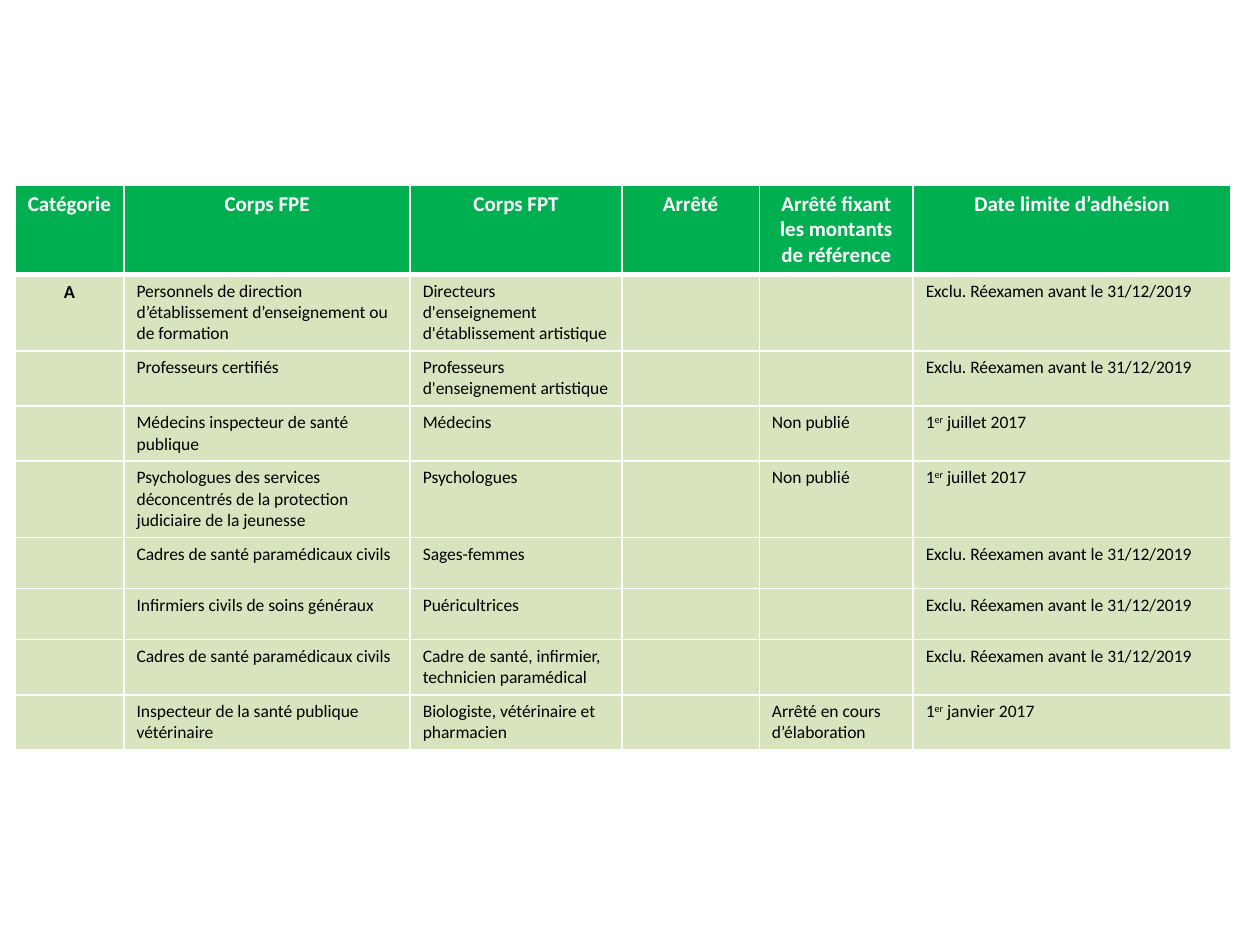
import dataclasses

import lxml.etree
import pptx
import pptx.dml.color
import pptx.enum.text
import pptx.oxml.ns
import pptx.table
import pptx.util

Cm = pptx.util.Cm
Pt = pptx.util.Pt
RGBColor = pptx.dml.color.RGBColor
Align = pptx.enum.text.PP_ALIGN
qn = pptx.oxml.ns.qn

WHITE = RGBColor(0xFF, 0xFF, 0xFF)
BLACK = RGBColor(0x00, 0x00, 0x00)
GREEN = RGBColor(0x00, 0xB0, 0x50)
PALE_GREEN = RGBColor(0xD7, 0xE4, 0xBD)

EXCLUDED = "Exclu. Réexamen avant le 31/12/2019"
JULY = "1^er^ juillet 2017"
UNPUBLISHED = "Non publié"
HEADINGS = (
    "Catégorie",
    "Corps FPE",
    "Corps FPT",
    "Arrêté",
    "Arrêté fixant les montants de référence",
    "Date limite d’adhésion",
)
COLUMN_WIDTHS = (2.2, 5.77, 4.27, 2.77, 3.1, 6.41)
HEADER_HEIGHT = 1.78
TWO_LINES = 1.11
THREE_LINES = 1.54
ONE_LINE = 1.03


@dataclasses.dataclass(frozen=True)
class Corps:
    state: str
    territorial: str
    deadline: str
    height: float
    amounts: str = ""
    category: str = ""
    order: str = ""

    def texts(self) -> tuple[str, ...]:
        return (self.category, self.state, self.territorial,
                self.order, self.amounts, self.deadline)


CORPS = (
    Corps("Personnels de direction d’établissement d’enseignement ou de formation",
          "Directeurs d'enseignement d'établissement artistique",
          EXCLUDED, THREE_LINES, category="A"),
    Corps("Professeurs certifiés", "Professeurs d'enseignement artistique",
          EXCLUDED, TWO_LINES),
    Corps("Médecins inspecteur de santé publique", "Médecins",
          JULY, TWO_LINES, UNPUBLISHED),
    Corps("Psychologues des services déconcentrés de la protection judiciaire de la jeunesse",
          "Psychologues", JULY, THREE_LINES, UNPUBLISHED),
    Corps("Cadres de santé paramédicaux civils", "Sages-femmes", EXCLUDED, ONE_LINE),
    Corps("Infirmiers civils de soins généraux", "Puéricultrices", EXCLUDED, ONE_LINE),
    Corps("Cadres de santé paramédicaux civils",
          "Cadre de santé, infirmier, technicien paramédical", EXCLUDED, TWO_LINES),
    Corps("Inspecteur de la santé publique vétérinaire",
          "Biologiste, vétérinaire et pharmacien",
          "1^er^ janvier 2017", TWO_LINES, "Arrêté en cours d’élaboration"),
)


def write(cell: pptx.table._Cell, text: str, *, size: float = 10,
          color: RGBColor = BLACK, bold: bool = False,
          align: Align = Align.LEFT) -> None:
    paragraph = cell.text_frame.paragraphs[0]
    paragraph.alignment = align
    for index, part in enumerate(text.split("^")):
        if not part:
            continue
        run = paragraph.add_run()
        run.text = part
        run.font.name = "Calibri"
        run.font.size = Pt(size)
        run.font.bold = bold
        run.font.color.rgb = color
        if index % 2:
            run._r.get_or_add_rPr().set("baseline", "30000")


def paint(cell: pptx.table._Cell, fill: RGBColor, *,
          top: float = 1, bottom: float = 1) -> None:
    cell.fill.solid()
    cell.fill.fore_color.rgb = fill
    properties = cell._tc.get_or_add_tcPr()
    sides = (("lnL", 1), ("lnR", 1), ("lnT", top), ("lnB", bottom))
    for position, (side, width) in enumerate(sides):
        border = lxml.etree.Element(qn(f"a:{side}"), w=str(Pt(width)))
        solid = lxml.etree.SubElement(border, qn("a:solidFill"))
        lxml.etree.SubElement(solid, qn("a:srgbClr"), val=str(WHITE))
        properties.insert(position, border)


def main() -> None:
    presentation = pptx.Presentation()
    presentation.slide_width = Cm(25.4)
    presentation.slide_height = Cm(19.05)
    slide = presentation.slides.add_slide(presentation.slide_layouts[6])

    heights = (HEADER_HEIGHT, *(corps.height for corps in CORPS))
    schedule = slide.shapes.add_table(
        len(heights), len(HEADINGS), Cm(0.3), Cm(3.73),
        Cm(sum(COLUMN_WIDTHS)), Cm(sum(heights))).table
    schedule.horz_banding = False
    for column, width in zip(schedule.columns, COLUMN_WIDTHS):
        column.width = Cm(width)
    for row, height in zip(schedule.rows, heights):
        row.height = Cm(height)

    for column, heading in enumerate(HEADINGS):
        cell = schedule.cell(0, column)
        paint(cell, GREEN, bottom=3)
        write(cell, heading, size=12, color=WHITE, bold=True, align=Align.CENTER)

    for row, corps in enumerate(CORPS, start=1):
        for column, text in enumerate(corps.texts()):
            cell = schedule.cell(row, column)
            paint(cell, PALE_GREEN, top=3 if row == 1 else 1)
            if column == 0:
                write(cell, text, size=10.5, bold=True, align=Align.CENTER)
            else:
                write(cell, text)

    presentation.save("out.pptx")


if __name__ == "__main__":
    main()
